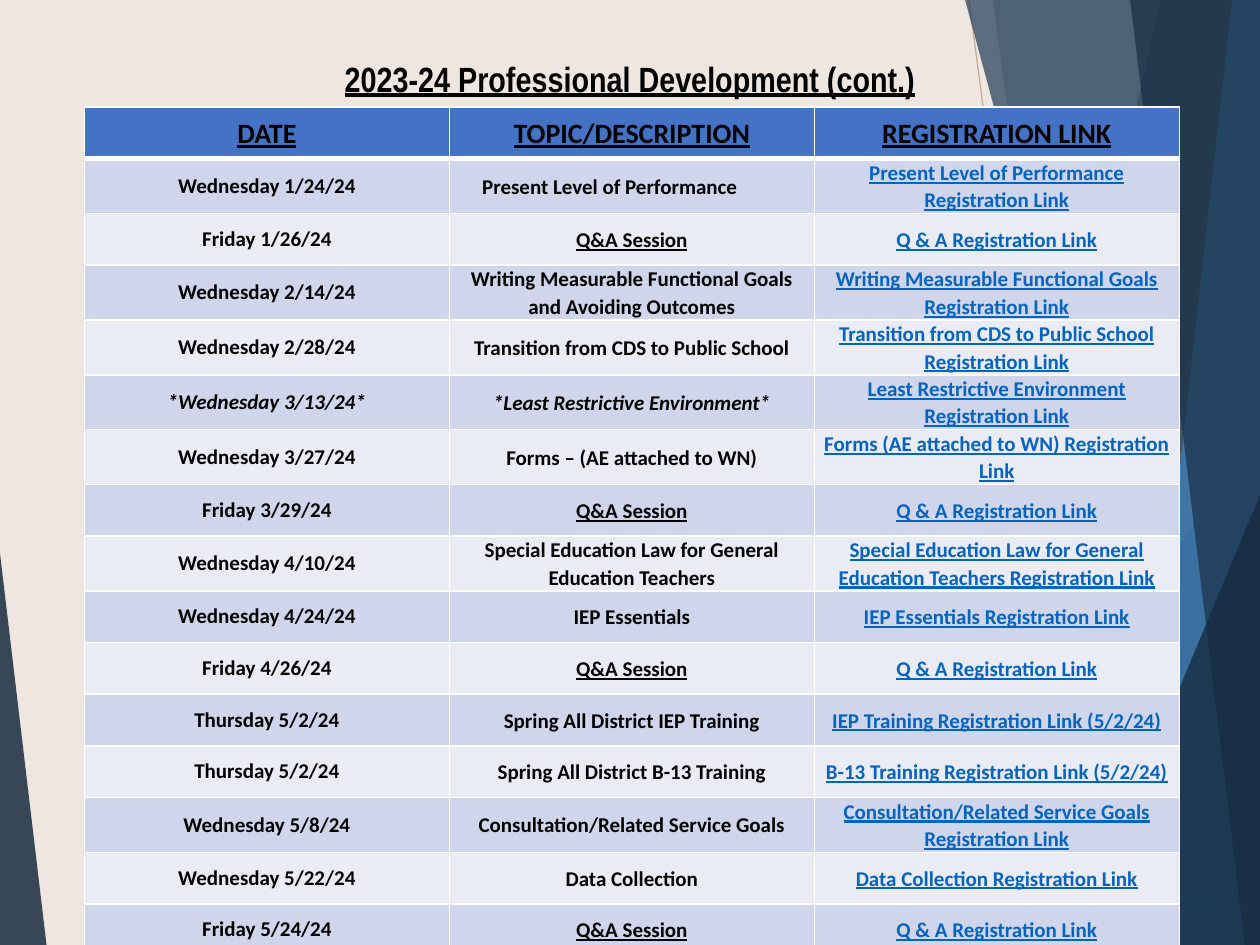
import pptx
import pptx.util
import pptx.dml.color
import pptx.enum.shapes
import pptx.enum.text
from lxml import etree
from pptx.oxml.ns import qn
from pptx.util import Inches, Pt

TITLE = "2023-24 Professional Development (cont.)"
HEADERS = ("DATE", "TOPIC/DESCRIPTION", "REGISTRATION LINK")
QA = ("Q&A Session", "Q & A Registration Link")
SESSIONS = [
    ("Wednesday 1/24/24", "Present Level of Performance",
     "Present Level of Performance Registration Link"),
    ("Friday 1/26/24", *QA),
    ("Wednesday 2/14/24", "Writing Measurable Functional Goals and Avoiding Outcomes",
     "Writing Measurable Functional Goals Registration Link"),
    ("Wednesday 2/28/24", "Transition from CDS to Public School",
     "Transition from CDS to Public School Registration Link"),
    ("*Wednesday 3/13/24*", "*Least Restrictive Environment*",
     "Least Restrictive Environment Registration Link"),
    ("Wednesday 3/27/24", "Forms – (AE attached to WN)",
     "Forms (AE attached to WN) Registration Link"),
    ("Friday 3/29/24", *QA),
    ("Wednesday 4/10/24", "Special Education Law for General Education Teachers",
     "Special Education Law for General Education Teachers Registration Link"),
    ("Wednesday 4/24/24", "IEP Essentials", "IEP Essentials Registration Link"),
    ("Friday 4/26/24", *QA),
    ("Thursday 5/2/24", "Spring All District IEP Training",
     "IEP Training Registration Link (5/2/24)"),
    ("Thursday 5/2/24", "Spring All District B-13 Training",
     "B-13 Training Registration Link (5/2/24)"),
    ("Wednesday 5/8/24", "Consultation/Related Service Goals",
     "Consultation/Related Service Goals Registration Link"),
    ("Wednesday 5/22/24", "Data Collection", "Data Collection Registration Link"),
    ("Friday 5/24/24", *QA),
]

BLACK, LINK, WHITE = "000000", "0563C1", "FFFFFF"
HEADER_FILL, BAND_FILLS = "4472C4", ("CFD5EA", "E9EBF5")

# start, end, colour
BACKGROUND_LINES = [
    ((7.69, 0), (8.69, 7.5), "C6AB94"),
    ((10, 4.03), (6.09, 7.5), "D6C3B2"),
]
# corners, colour, opacity in percent
FACETS = [
    ([(9.21, 0), (10, 0), (10, 7.5), (7.53, 7.5)], "162C40", 30),
    ([(7.88, 0), (10, 0), (10, 7.5), (8.87, 7.5)], "162C40", 20),
    ([(7.33, 7.5), (10, 3.33), (10, 7.5)], "274F73", 72),
    ([(7.66, 0), (10, 0), (10, 7.5), (9.68, 7.5)], "1D3B56", 70),
    ([(9.78, 0), (10, 0), (10, 7.5), (8.94, 7.5)], "4283BE", 70),
    ([(8.97, 0), (10, 0), (10, 7.5), (9.88, 7.5)], "162C40", 65),
    ([(8.51, 7.5), (10, 3.93), (10, 7.5)], "162C40", 80),
    ([(0, 7.5), (0, 4.39), (0.37, 7.5)], "162C40", 85),
]


def color(hex_string):
    return pptx.dml.color.RGBColor.from_string(hex_string)


def paint(fill, hex_string):
    fill.solid()
    fill.fore_color.rgb = color(hex_string)


def write(text_frame, text, size=12, font="Calibri", text_color=BLACK,
          underline=False, italic=False, spacing=None):
    paragraph = text_frame.paragraphs[0]
    paragraph.alignment = pptx.enum.text.PP_ALIGN.CENTER
    if spacing:
        paragraph.line_spacing = spacing
    run = paragraph.add_run()
    run.text = text
    run.font.name = font
    run.font.size = Pt(size)
    run.font.bold = True
    run.font.italic = italic
    run.font.underline = underline
    run.font.color.rgb = color(text_color)


def add_background_line(slide, start, end, line_color):
    line = slide.shapes.add_connector(
        pptx.enum.shapes.MSO_CONNECTOR.STRAIGHT,
        *(Inches(value) for value in (*start, *end)))
    line.line.color.rgb = color(line_color)
    line.line.width = Pt(0.75)
    etree.SubElement(line._element.spPr, qn("a:effectLst"))


def add_facet(slide, corners, fill_color, opacity):
    points = [(Inches(x), Inches(y)) for x, y in corners]
    builder = slide.shapes.build_freeform(*points[0])
    builder.add_line_segments(points[1:], close=True)
    facet = builder.convert_to_shape()
    facet.shadow.inherit = False
    facet.line.fill.background()
    paint(facet.fill, fill_color)
    rgb = next(facet._element.spPr.iter(qn("a:srgbClr")))
    etree.SubElement(rgb, qn("a:alpha"), val=str(opacity * 1000))


def set_borders(cell, bottom_width):
    """White borders, placed before the cell fill as the schema requires."""
    properties = cell._tc.get_or_add_tcPr()
    sides = (("lnL", 1), ("lnR", 1), ("lnT", 1), ("lnB", bottom_width))
    for index, (side, width) in enumerate(sides):
        border = etree.Element(qn(f"a:{side}"), w=str(Pt(width)))
        solid = etree.SubElement(border, qn("a:solidFill"))
        etree.SubElement(solid, qn("a:srgbClr"), val=WHITE)
        properties.insert(index, border)


def fill_cell(cell, text, fill_color, bottom_width=1, **text_format):
    paint(cell.fill, fill_color)
    set_borders(cell, bottom_width)
    cell.vertical_anchor = pptx.enum.text.MSO_ANCHOR.MIDDLE
    cell.margin_left = cell.margin_right = Inches(0.07)
    cell.margin_top = cell.margin_bottom = 0
    write(cell.text_frame, text, **text_format)


def add_schedule(slide):
    row_count = len(SESSIONS) + 1
    table = slide.shapes.add_table(
        row_count, len(HEADERS), Inches(0.67), Inches(0.85),
        Inches(8.69), Inches(0.41 * row_count)).table
    for column, header in enumerate(HEADERS):
        fill_cell(table.cell(0, column), header, HEADER_FILL, bottom_width=3,
                  size=16, underline=True, spacing=1.07)
    for row, (date, topic, link) in enumerate(SESSIONS, start=1):
        band = BAND_FILLS[(row - 1) % 2]
        starred = date.startswith("*")
        fill_cell(table.cell(row, 0), date, band, italic=starred)
        fill_cell(table.cell(row, 1), topic, band, italic=starred,
                  underline=topic == QA[0], spacing=1.07)
        fill_cell(table.cell(row, 2), link, band, text_color=LINK,
                  underline=True, spacing=1.07)
    # The first topic sits a little left of its column's centre.
    table.cell(1, 1).margin_right = Inches(0.42)


def main():
    presentation = pptx.Presentation()
    presentation.slide_width = Inches(10)
    presentation.slide_height = Inches(7.5)
    slide = presentation.slides.add_slide(presentation.slide_layouts[6])
    paint(slide.background.fill, "EEE6DF")

    for background_line in BACKGROUND_LINES:
        add_background_line(slide, *background_line)
    for facet in FACETS:
        add_facet(slide, *facet)
    add_schedule(slide)

    title = slide.shapes.add_textbox(Inches(1.97), Inches(0.41), Inches(6.06), Inches(0.44))
    title.text_frame.word_wrap = True
    title.text_frame.auto_size = pptx.enum.text.MSO_AUTO_SIZE.SHAPE_TO_FIT_TEXT
    write(title.text_frame, TITLE, size=20, font="Arial Narrow", underline=True)

    presentation.save("out.pptx")


if __name__ == "__main__":
    main()
